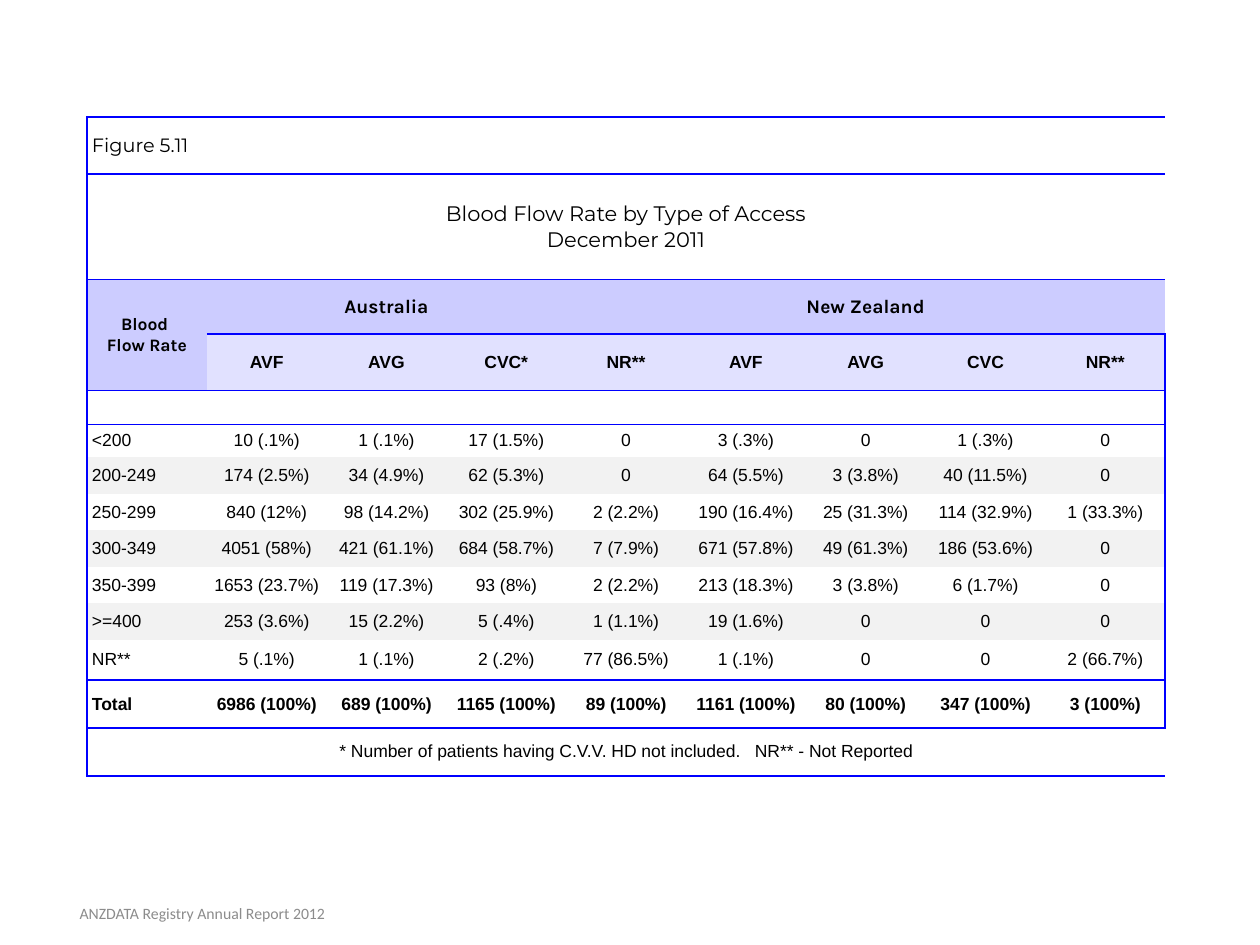
from lxml.etree import SubElement
from pptx import Presentation
from pptx.dml.color import RGBColor
from pptx.enum.text import MSO_ANCHOR as Anchor, PP_ALIGN as Align
from pptx.oxml.ns import qn
from pptx.util import Inches, Pt

BLACK = RGBColor(0x00, 0x00, 0x00)
BLUE = RGBColor(0x00, 0x00, 0xFF)
LAVENDER = RGBColor(0xCC, 0xCC, 0xFF)
PALE_LAVENDER = RGBColor(0xE1, 0xE1, 0xFF)
LIGHT_GREY = RGBColor(0xF2, 0xF2, 0xF2)
GREY = RGBColor(0x8C, 0x8C, 0x8C)

ROW_HEIGHTS = [0.45, 0.84, 0.43, 0.45, 0.27, 0.26] + [0.29] * 5 + [0.32, 0.38, 0.38]
COLUMN_COUNT = 9
RULED_ROWS = {0, 1, 2, 3, 11, 12, 13}  # rows with a line below
HEADINGS = ["AVF", "AVG", "CVC*", "NR**", "AVF", "AVG", "CVC", "NR**"]
FLOW_RATES = [
    ["<200", "10 (.1%)", "1 (.1%)", "17 (1.5%)", "0",
     "3 (.3%)", "0", "1 (.3%)", "0"],
    ["200-249", "174 (2.5%)", "34 (4.9%)", "62 (5.3%)", "0",
     "64 (5.5%)", "3 (3.8%)", "40 (11.5%)", "0"],
    ["250-299", "840 (12%)", "98 (14.2%)", "302 (25.9%)", "2 (2.2%)",
     "190 (16.4%)", "25 (31.3%)", "114 (32.9%)", "1 (33.3%)"],
    ["300-349", "4051 (58%)", "421 (61.1%)", "684 (58.7%)", "7 (7.9%)",
     "671 (57.8%)", "49 (61.3%)", "186 (53.6%)", "0"],
    ["350-399", "1653 (23.7%)", "119 (17.3%)", "93 (8%)", "2 (2.2%)",
     "213 (18.3%)", "3 (3.8%)", "6 (1.7%)", "0"],
    [">=400", "253 (3.6%)", "15 (2.2%)", "5 (.4%)", "1 (1.1%)",
     "19 (1.6%)", "0", "0", "0"],
    ["NR**", "5 (.1%)", "1 (.1%)", "2 (.2%)", "77 (86.5%)",
     "1 (.1%)", "0", "0", "2 (66.7%)"],
    ["Total", "6986 (100%)", "689 (100%)", "1165 (100%)", "89 (100%)",
     "1161 (100%)", "80 (100%)", "347 (100%)", "3 (100%)"],
]


class ReportSlide:
    """Holds the table style and the slide being built."""

    no_table_style = "{2D5ABB26-0587-4C30-8999-92F81FD0307C}"
    margin_x, margin_y = Inches(0.04), Inches(0.02)

    def __init__(self, slide):
        self.slide = slide

    def add_lines(self, frame, lines, font="Arial", size=10, bold=False,
                  color=BLACK, align=Align.CENTER, after=0):
        """Add one paragraph per line; a line is a list of runs."""
        for index, texts in enumerate(lines):
            para = frame.add_paragraph() if index else frame.paragraphs[0]
            para.alignment = align
            if after:
                para.space_after = Pt(after)
            for text in texts:
                span = para.add_run()
                span.text = text
                span.font.name = font
                span.font.size = Pt(size)
                span.font.bold = bold
                span.font.color.rgb = color
                if text == " ":  # a lone space is a wide gap
                    span._r.get_or_add_rPr().set("spc", "560")

    def text_box(self, left, top, width, height, text, **style):
        box = self.slide.shapes.add_textbox(
            Inches(left), Inches(top), Inches(width), Inches(height))
        frame = box.text_frame
        frame.word_wrap = True
        frame.vertical_anchor = Anchor.MIDDLE
        self.add_lines(frame, [[text]], **style)

    def table(self, left, top, width, row_heights, column_count):
        frame = self.slide.shapes.add_table(
            len(row_heights), column_count, Inches(left), Inches(top),
            Inches(width), Inches(sum(row_heights)))
        table = frame.table
        table.first_row = table.horz_banding = False
        table._tbl.tblPr.find(qn("a:tableStyleId")).text = self.no_table_style
        for row, height in zip(table.rows, row_heights):
            row.height = Inches(height)
        return table

    def cell_look(self, cell, sides, fill=None):
        cell.margin_left = cell.margin_right = self.margin_x
        cell.margin_top = cell.margin_bottom = self.margin_y
        cell.vertical_anchor = Anchor.MIDDLE
        properties = cell._tc.get_or_add_tcPr()
        for side in sides:
            line = SubElement(properties, qn("a:ln" + side), w=str(Pt(1)))
            solid = SubElement(line, qn("a:solidFill"))
            SubElement(solid, qn("a:srgbClr"), val=str(BLUE))
        if fill is None:
            cell.fill.background()
        else:
            cell.fill.solid()
            cell.fill.fore_color.rgb = fill

    def cell_text(self, cell, *lines, **style):
        self.add_lines(cell.text_frame, lines, **style)


def row_fill(row, column):
    if row == 2 or (row == 3 and column == 0):
        return LAVENDER
    if row == 3:
        return PALE_LAVENDER
    return LIGHT_GREY if row in (6, 8, 10) else None


def ruled_sides(row, column):
    """Sides in schema order: left, right, top, bottom."""
    in_stub = column == 0  # the row label spans rows 2 and 3
    sides = []
    if column == 0:
        sides.append("L")
    if column == COLUMN_COUNT - 1:
        sides.append("R")
    if row == 0 or (row - 1 in RULED_ROWS and not (row == 3 and in_stub)):
        sides.append("T")
    if row in RULED_ROWS and not (row == 2 and in_stub):
        sides.append("B")
    return sides


def main():
    deck = Presentation()
    deck.slide_width, deck.slide_height = Inches(10), Inches(7.5)
    page = ReportSlide(deck.slides.add_slide(deck.slide_layouts[6]))

    # Table frame: lines, fills and merged cells
    table = page.table(0.69, 0.93, 8.56, ROW_HEIGHTS, COLUMN_COUNT)
    for row in range(len(ROW_HEIGHTS)):
        for column in range(COLUMN_COUNT):
            page.cell_look(table.cell(row, column), ruled_sides(row, column),
                           row_fill(row, column))
    last = COLUMN_COUNT - 1
    for row, first, end_row, end in [(0, 0, 0, last), (1, 0, 1, last),
                                     (2, 0, 3, 0), (2, 1, 2, 3),
                                     (2, 4, 2, last), (13, 0, 13, last)]:
        table.cell(row, first).merge(table.cell(end_row, end))

    # Figure number and title
    page.cell_text(table.cell(0, 0), ["Figure 5.11"], font="Montserrat",
                   size=11, align=Align.LEFT)
    page.cell_text(table.cell(1, 0), ["Blood Flow Rate by Type of Access"],
                   ["December 2011"], font="Montserrat", size=12)

    # Column headings
    page.cell_text(table.cell(2, 0), ["Blood "], ["Flow Rate"],
                   font="Karla", bold=True)
    for column, country in [(1, "Australia"), (4, "New Zealand")]:
        page.cell_text(table.cell(2, column), [country], font="Karla",
                       size=11, bold=True)
    for column, heading in enumerate(HEADINGS, 1):
        page.cell_text(table.cell(3, column), [heading], bold=True, after=14)

    # Spacer row, kept low by a small font
    for column in range(COLUMN_COUNT):
        para = table.cell(4, column).text_frame.paragraphs[0]
        SubElement(para._p, qn("a:endParaRPr"), sz="1000")

    # Flow rates and total
    for row, values in enumerate(FLOW_RATES, 5):
        for column, value in enumerate(values):
            page.cell_text(table.cell(row, column), [value],
                           bold=values[0] == "Total", after=14,
                           align=Align.CENTER if column else Align.LEFT)

    # Footnote and source
    page.cell_text(table.cell(13, 0),
                   ["* Number of patients having C.V.V. HD not included.",
                    " ", "NR** - Not Reported"], after=14)
    page.text_box(0.02, 7.05, 3.17, 0.4, "ANZDATA Registry Annual Report 2012",
                  font="Calibri", size=9, color=GREY)

    deck.save("out.pptx")


if __name__ == "__main__":
    main()
